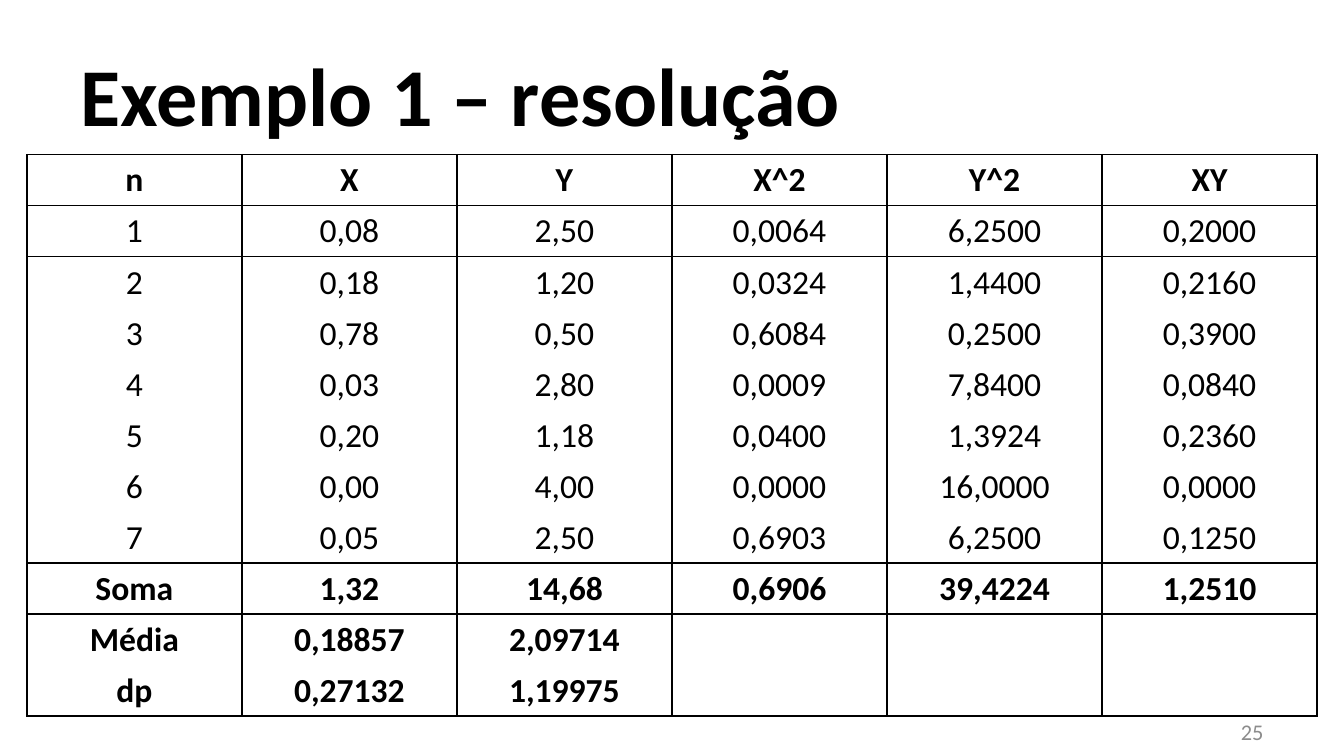
from lxml import etree
from pptx import Presentation
from pptx import util as u
from pptx.dml.color import RGBColor
from pptx.enum import text
from pptx.oxml import ns

SLIDE_WIDTH = 10
SLIDE_HEIGHT = SLIDE_WIDTH * 9 / 16
ROWS = [
    ["n", "X", "Y", "X^2", "Y^2", "XY"],
    ["1", "0,08", "2,50", "0,0064", "6,2500", "0,2000"],
    ["2", "0,18", "1,20", "0,0324", "1,4400", "0,2160"],
    ["3", "0,78", "0,50", "0,6084", "0,2500", "0,3900"],
    ["4", "0,03", "2,80", "0,0009", "7,8400", "0,0840"],
    ["5", "0,20", "1,18", "0,0400", "1,3924", "0,2360"],
    ["6", "0,00", "4,00", "0,0000", "16,0000", "0,0000"],
    ["7", "0,05", "2,50", "0,6903", "6,2500", "0,1250"],
    ["Soma", "1,32", "14,68", "0,6906", "39,4224", "1,2510"],
    ["Média", "0,18857", "2,09714", "", "", ""],
    ["dp", "0,27132", "1,19975", "", "", ""],
]
BOLD_ROWS = {0, 8, 9, 10}
RULES = {0, 1, 2, 8, 9, 11}  # row boundaries that carry a horizontal line
ROW_HEIGHT = 0.38


def color(value):
    return RGBColor.from_string(value)


def write(frame, content, size=18, bold=False, fill="000000", font="Calibri",
          align=text.PP_ALIGN.LEFT):
    paragraph = frame.paragraphs[0]
    paragraph.alignment = align
    run = paragraph.add_run()
    run.text = content
    run.font.size = u.Pt(size)
    run.font.bold = bold
    run.font.name = font
    run.font.color.rgb = color(fill)


class SlideBuilder:
    def __init__(self, slide, line_color="000000", line_width=1):
        self.slide = slide
        self.line_color = line_color
        self.line_width = line_width

    def text_box(self, content, left, top, width, height, **style):
        box = self.slide.shapes.add_textbox(*map(u.Inches, (left, top, width, height)))
        frame = box.text_frame
        frame.word_wrap = True
        frame.vertical_anchor = text.MSO_ANCHOR.MIDDLE
        write(frame, content, **style)

    def border(self, cell, side, visible):
        """Set one cell border; side is L, R, T or B."""
        properties = cell._tc.get_or_add_tcPr()
        line = etree.SubElement(properties, ns.qn(f"a:ln{side}"),
                                w=str(u.Pt(self.line_width)))
        if visible:
            solid = etree.SubElement(line, ns.qn("a:solidFill"))
            etree.SubElement(solid, ns.qn("a:srgbClr"), val=self.line_color)
        else:
            etree.SubElement(line, ns.qn("a:noFill"))

    def table(self, rows, left, top, width, row_height, bold_rows, rules):
        frame = self.slide.shapes.add_table(
            len(rows), len(rows[0]), u.Inches(left), u.Inches(top),
            u.Inches(width), u.Inches(row_height * len(rows)))
        table = frame.table
        table.first_row = table.horz_banding = False
        for i, values in enumerate(rows):
            table.rows[i].height = u.Inches(row_height)
            for j, value in enumerate(values):
                cell = table.cell(i, j)
                cell.margin_top = u.Inches(0.04)
                cell.margin_bottom = u.Inches(0.03)
                for side, visible in (("L", True), ("R", True),
                                      ("T", i in rules), ("B", i + 1 in rules)):
                    self.border(cell, side, visible)
                cell.fill.background()
                if value:
                    write(cell.text_frame, value, bold=i in bold_rows,
                          align=text.PP_ALIGN.CENTER)


def main():
    presentation = Presentation()
    presentation.slide_width = u.Inches(SLIDE_WIDTH)
    presentation.slide_height = u.Inches(SLIDE_HEIGHT)
    builder = SlideBuilder(presentation.slides.add_slide(presentation.slide_layouts[6]))
    builder.text_box("Exemplo 1 – resolução", 0.5, 0.23, 9, 0.94, size=44, bold=True)
    builder.table(ROWS, 0.2, 1.15, 9.6, ROW_HEIGHT, BOLD_ROWS, RULES)
    builder.text_box("25", 7.17, 5.29, 2.33, 0.3, size=12, fill="8C8C8C",
                     align=text.PP_ALIGN.RIGHT)
    presentation.save("out.pptx")


if __name__ == "__main__":
    main()
